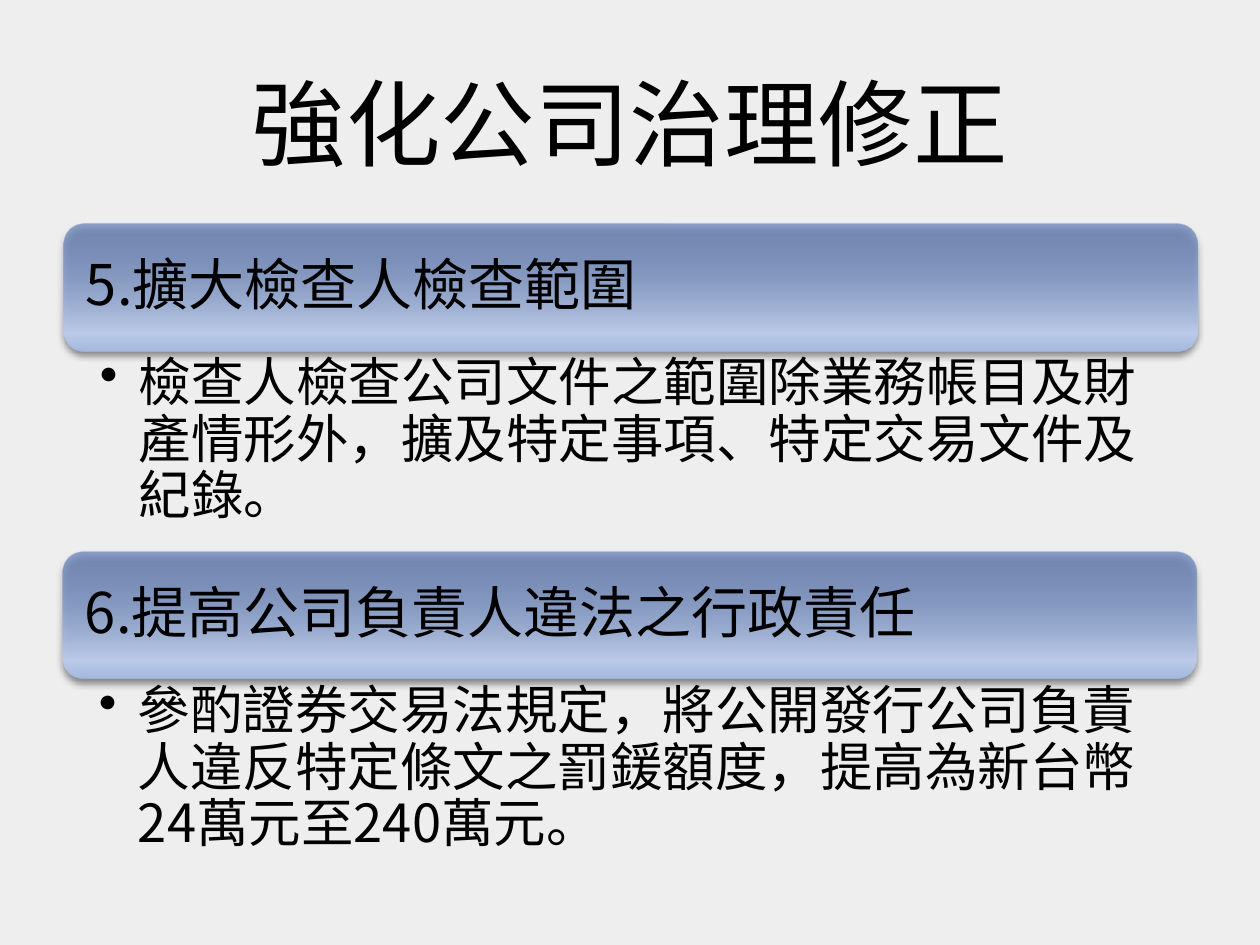
"""Build a slide on strengthening corporate governance, with two headed points."""
from lxml import etree
from pptx import Presentation
from pptx import util as u
from pptx.dml.color import RGBColor
from pptx.enum import shapes, text
from pptx.oxml import parse_xml
from pptx.oxml.ns import nsdecls, qn

PX = u.Inches(1) / 126
FONT = "Noto Sans CJK SC"
COLORS = {"background": "EEEEEE", "text": "000000", "shadow": "000000",
          "edge": "A3B8DF", "light": "BCCBE7", "dark": "486AAF"}


def px(*lengths):
    return [round(length * PX) for length in lengths]


def add_text(box, margins, anchor, wording, size, align, bullet=False):
    shape = slide.shapes.add_textbox(*px(*box))
    frame = shape.text_frame
    frame.word_wrap = True
    frame.vertical_anchor = anchor
    (frame.margin_left, frame.margin_top,
     frame.margin_right, frame.margin_bottom) = px(*margins)
    paragraph = frame.paragraphs[0]
    paragraph.text = wording
    paragraph.alignment = align
    if bullet:
        properties = paragraph._p.get_or_add_pPr()
        indent, = px(39)
        properties.set("marL", str(indent))
        properties.set("indent", str(-indent))
        etree.SubElement(properties, qn("a:buChar")).set("char", "•")
    paragraph.font.size = u.Pt(size)
    paragraph.font.name = FONT
    paragraph.font.color.rgb = RGBColor.from_string(COLORS["text"])
    etree.SubElement(paragraph.font._element, qn("a:ea")).set("typeface", FONT)
    return paragraph


presentation = Presentation()
presentation.slide_width, presentation.slide_height = px(1260, 945)
slide = presentation.slides.add_slide(presentation.slide_layouts[6])
slide.background.fill.solid()
slide.background.fill.fore_color.rgb = RGBColor.from_string(COLORS["background"])

add_text((63, 26, 1134, 158), (13, 6, 13, 6), text.MSO_ANCHOR.BOTTOM,
         "強化公司治理修正", 54, text.PP_ALIGN.CENTER)

points = [
    (64, 224, "5.擴大檢查人檢查範圍",
     "檢查人檢查公司文件之範圍除業務帳目及財產情形外，擴及特定事項、特定交易文件及紀錄。"),
    (63, 552, "6.提高公司負責人違法之行政責任",
     "參酌證券交易法規定，將公開發行公司負責人違反特定條文之罰鍰額度，提高為新台幣24萬元至240萬元。"),
]
for left, top, heading, detail in points:
    banner = slide.shapes.add_shape(shapes.MSO_SHAPE.ROUNDED_RECTANGLE,
                                    *px(left, top, 1133, 127))
    banner.line.fill.background()
    properties = banner._element.spPr
    properties.find(qn("a:prstGeom")).addnext(parse_xml(
        f'<a:gradFill {nsdecls("a")} rotWithShape="1"><a:gsLst>'
        f'<a:gs pos="0"><a:srgbClr val="{COLORS["edge"]}"/></a:gs>'
        f'<a:gs pos="15000"><a:srgbClr val="{COLORS["light"]}"/></a:gs>'
        f'<a:gs pos="100000"><a:srgbClr val="{COLORS["dark"]}">'
        '<a:alpha val="59000"/></a:srgbClr></a:gs>'
        '</a:gsLst><a:lin ang="16200000" scaled="0"/></a:gradFill>'))
    properties.append(parse_xml(
        f'<a:effectLst {nsdecls("a")}><a:outerShdw blurRad="{u.Pt(4)}" '
        f'dist="{u.Pt(2)}" dir="5400000" rotWithShape="0">'
        f'<a:srgbClr val="{COLORS["shadow"]}"><a:alpha val="43000"/></a:srgbClr>'
        '</a:outerShdw></a:effectLst>'))
    title = add_text((left + 6, top + 6, 1120, 115), (16, 16, 16, 16),
                     text.MSO_ANCHOR.MIDDLE, heading, 32, text.PP_ALIGN.LEFT)
    body = add_text((left, top + 127, 1133, 219), (36, 5, 29, 5),
                    text.MSO_ANCHOR.TOP, detail, 30, text.PP_ALIGN.LEFT, bullet=True)
    title.line_spacing = body.line_spacing = 0.9

presentation.save("out.pptx")
